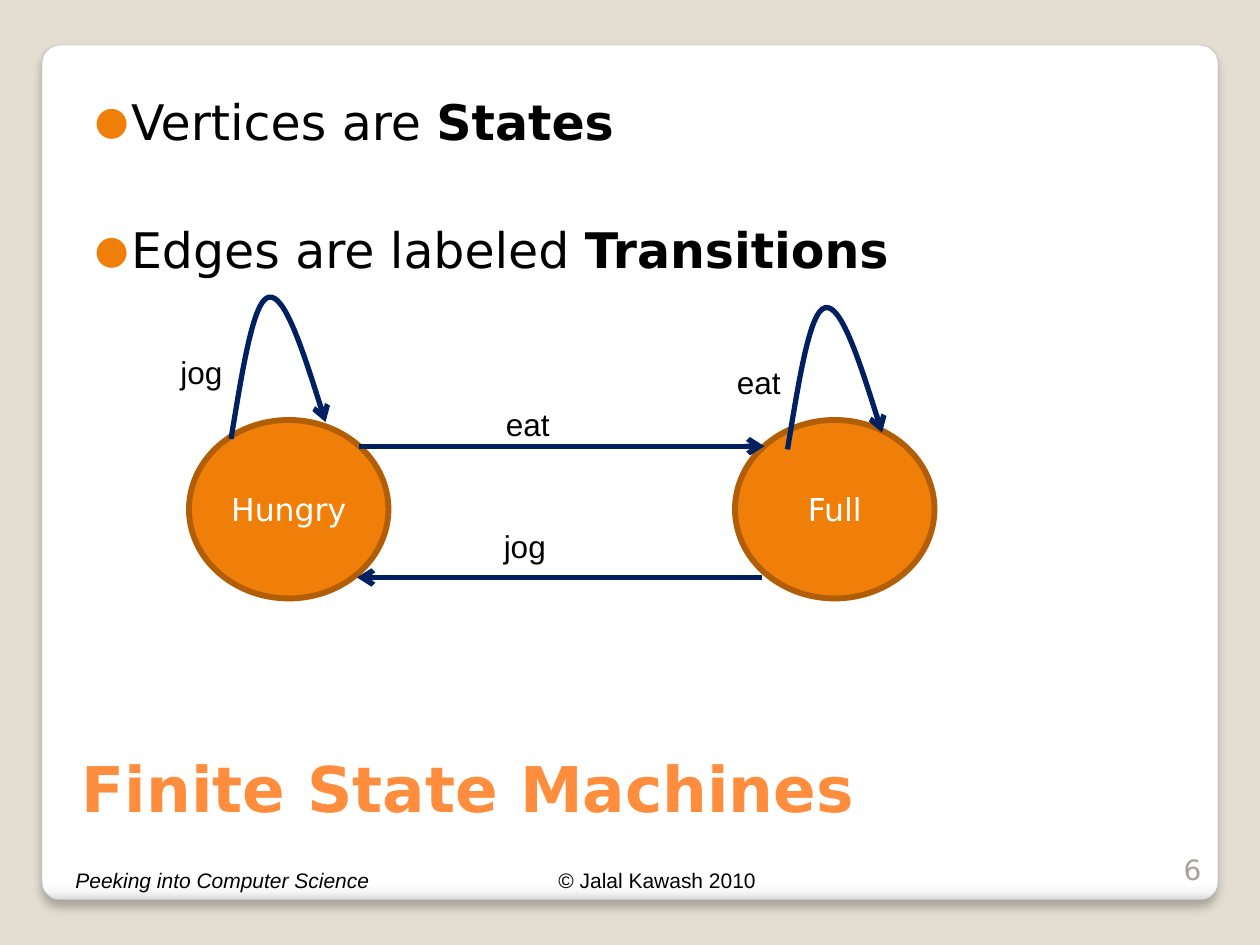
from lxml.etree import SubElement
from pptx import Presentation
from pptx.dml.color import RGBColor
from pptx.enum.shapes import MSO_CONNECTOR, MSO_SHAPE
from pptx.enum.text import MSO_ANCHOR, PP_ALIGN
from pptx.oxml import parse_xml
from pptx.oxml.ns import nsdecls, qn
from pptx.util import Inches, Pt

COLORS = {
    "background": "E3DED1", "white": "FFFFFF", "panel_line": "A4A3A3",
    "black": "000000", "title": "FF8D3E", "state": "F07F09",
    "state_line": "B25E07", "edge": "002060", "number": "A7A399",
}
RGB = {name: RGBColor.from_string(value) for name, value in COLORS.items()}
SANS, ARIAL = "DejaVu Sans", "Arial"

prs = Presentation()
prs.slide_width, prs.slide_height = Inches(10), Inches(7.5)
COL = prs.slide_width / 120
ROW = prs.slide_height / 90
s = prs.slides.add_slide(prs.slide_layouts[6])
s.background.fill.solid()
s.background.fill.fore_color.rgb = RGB["background"]


def grid(*values):
    return [round(v * unit) for v, unit in zip(values, (COL, ROW) * 2)]


def add_text(box, text, size, font, color, wrap=False, anchor=MSO_ANCHOR.TOP):
    tf = s.shapes.add_textbox(*grid(*box)).text_frame
    tf.word_wrap = wrap
    tf.vertical_anchor = anchor
    p = tf.paragraphs[0]
    p.text = text
    f = p.runs[0].font
    f.size, f.name, f.color.rgb = Pt(size), font, RGB[color]
    return p


panel = s.shapes.add_shape(MSO_SHAPE.ROUNDED_RECTANGLE, *grid(4, 4.3, 112, 81.4))
panel.adjustments[0] = 0.021
panel.line.color.rgb = RGB["panel_line"]
panel.line.width = Pt(0.16)
panel.fill.gradient()
panel.fill.gradient_angle = 270
stops = panel.fill._fill._gradFill.find(qn("a:gsLst"))
for stop in list(stops):
    stops.remove(stop)
for share, color in ((0, "FFFFFF"), (98, "FFFFFF"), (99, "F7F7F7"), (100, "DADADA")):
    stop = SubElement(stops, qn("a:gs"), pos=str(share * 1000))
    SubElement(stop, qn("a:srgbClr"), val=color)
panel._element.spPr.append(parse_xml(
    f'<a:effectLst {nsdecls("a")}><a:outerShdw blurRad="{Pt(5)}" dist="{Pt(4)}" '
    f'dir="5400000" algn="tl" rotWithShape="0"><a:srgbClr val="{COLORS["black"]}">'
    '<a:alpha val="25000"/></a:srgbClr></a:outerShdw></a:effectLst>'))

add_text((52, 82, 21.4, 3.6), "© Jalal Kawash 2010", 12, ARIAL, "black")
course = add_text((6, 82, 30.6, 3.6), "Peeking into Computer Science", 12, ARIAL, "black")
course.runs[0].font.italic = True
title = add_text((6.6, 65.4, 107.4, 13.8), "Finite State Machines", 36, SANS, "title",
                 True, MSO_ANCHOR.BOTTOM)
title.runs[0].font.bold = True

tf = s.shapes.add_textbox(*grid(6.6, 7, 107.4, 55)).text_frame
tf.word_wrap = True
tf.margin_left, tf.margin_top = Inches(0.2), Inches(0.14)
for i, (lead, term) in enumerate((("Vertices are ", "States"),
                                  ("Edges are labeled ", "Transitions"))):
    p = tf.add_paragraph() if i else tf.paragraphs[0]
    pPr = p._p.get_or_add_pPr()
    pPr.set("marL", str(Inches(0.29)))
    pPr.set("indent", str(-Inches(0.29)))
    if i:
        p.space_before = Pt(40)
    SubElement(SubElement(pPr, qn("a:buClr")), qn("a:srgbClr"), val=COLORS["state"])
    SubElement(pPr, qn("a:buSzPct"), val="80000")
    SubElement(pPr, qn("a:buFont"), typeface=SANS)
    SubElement(pPr, qn("a:buChar"), char="●")
    for text, bold in ((lead, False), (term, True)):
        r = p.add_run()
        r.text = text
        r.font.size, r.font.name, r.font.bold = Pt(28), SANS, bold
        r.font.color.rgb = RGB["black"]

for col, name in ((18, "Hungry"), (70, "Full")):
    sp = s.shapes.add_shape(MSO_SHAPE.OVAL, *grid(col, 40, 19, 17))
    sp.shadow.inherit = False
    sp.fill.solid()
    sp.fill.fore_color.rgb = RGB["state"]
    sp.line.color.rgb = RGB["state_line"]
    sp.line.width = Pt(3.35)
    tf = sp.text_frame
    tf.text = name
    tf.vertical_anchor = MSO_ANCHOR.MIDDLE
    p = tf.paragraphs[0]
    p.alignment = PP_ALIGN.CENTER
    f = p.runs[0].font
    f.size, f.name, f.color.rgb = Pt(18), SANS, RGB["white"]

edges = []
for start, end, row in ((34.2, 72.8, 42.5), (72.6, 34, 55)):
    edge = s.shapes.add_connector(MSO_CONNECTOR.STRAIGHT, *grid(start, row, end, row))
    SubElement(edge._element.spPr, qn("a:effectLst"))
    edges.append(edge)

LOOP = ((1.1, -6.6), (2.1, -13.2), (3.6, -13.5), (5.1, -13.8), (7.1, -7.7), (9, -1.6))
for col, row in ((22, 41.8), (75, 42.8)):
    builder = s.shapes.build_freeform(*grid(col, row))
    builder.add_line_segments([grid(col + x, row + y) for x, y in LOOP], close=False)
    loop = builder.convert_to_shape()
    loop.shadow.inherit = False
    loop.fill.background()
    path = loop._element.spPr.find(".//" + qn("a:path"))
    lines = path.findall(qn("a:lnTo"))
    for i in (0, 3):
        curve = SubElement(path, qn("a:cubicBezTo"))
        for line in lines[i:i + 3]:
            curve.append(line[0])
            path.remove(line)
    edges.append(loop)

for edge in edges:
    edge.line.color.rgb = RGB["edge"]
    edge.line.width = Pt(3)
    SubElement(edge.line._get_or_add_ln(), qn("a:tailEnd"), type="arrow")

for col, row, label in ((47, 38, "eat"), (46.8, 49.6, "jog"), (16, 33, "jog"), (69, 34, "eat")):
    add_text((col, row, 7.2, 4.8), label, 18, ARIAL, "black")

number = add_text((109.6, 80.2, 6, 4.8), "6", 16, SANS, "number", True, MSO_ANCHOR.BOTTOM)
number.alignment = PP_ALIGN.RIGHT

prs.save("out.pptx")
